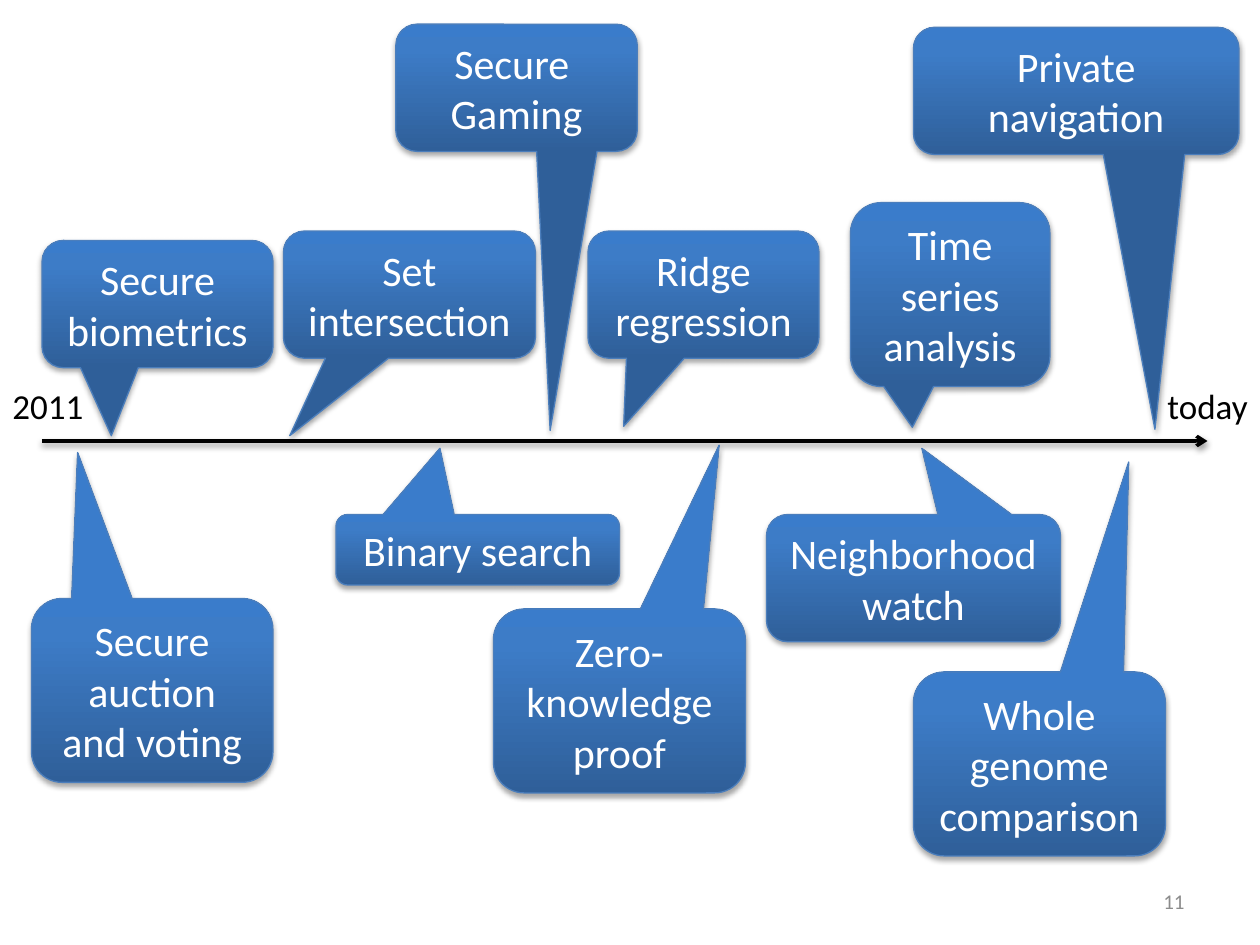
import copy

import pptx
import pptx.dml.color
import pptx.enum.shapes
import pptx.enum.text
import pptx.oxml
import pptx.oxml.ns
import pptx.util

Align = pptx.enum.text.PP_ALIGN
Anchor = pptx.enum.text.MSO_ANCHOR
qn = pptx.oxml.ns.qn

GRID = 12  # grid cells per inch
AXIS_ROW = 42
GRADIENT = [(0, "2F5F99"), (0.8, "3D7CC7"), (1, "3A7CCB")]

# text, left column, top row, columns wide, lines of text, pointer tip (column, row)
CALLOUTS = [
    ("Secure auction and voting", 3, 57, 23, 3, (7.4, 43.1)),
    ("Secure biometrics", 4, 22.9, 22, 2, (10.6, 41.5)),
    ("Ridge regression", 56, 22, 22, 2, (59.4, 40.6)),
    ("Neighborhood watch", 73, 49, 28, 2, (87.8, 42.7)),
    ("Binary search", 32, 49, 27, 1, (41.9, 42.7)),
    ("Time series analysis", 81, 19.3, 19, 3, (86.9, 40.7)),
    ("Set intersection", 27, 22, 24, 2, (27.6, 41.5)),
    ("Zero-knowledge proof", 47, 58, 24, 3, (68.5, 42.4)),
    ("Private navigation", 87, 2.6, 31, 2, (110, 40.9)),
    ("Secure \nGaming", 37.7, 2.3, 23, 2, (52.4, 41)),
    ("Whole genome comparison", 87, 64, 24, 3, (107.5, 44)),
]


def cells(count):
    return pptx.util.Inches(count / GRID)


def color(hex_value):
    return pptx.dml.color.RGBColor.from_string(hex_value)


def format_text(text_frame, text, size, hex_value, alignment):
    text_frame.text = text
    for paragraph in text_frame.paragraphs:
        paragraph.alignment = alignment
        for run in paragraph.runs:
            run.font.name = "Calibri"
            run.font.size = pptx.util.Pt(size)
            run.font.color.rgb = color(hex_value)


def set_shadow(properties, distance, opacity):
    """Put a soft shadow below the element; call after fill and line are set."""
    for old_effects in properties.findall(qn("a:effectLst")):
        properties.remove(old_effects)
    properties.append(pptx.oxml.parse_xml(
        f'<a:effectLst {pptx.oxml.ns.nsdecls("a")}>'
        f'<a:outerShdw blurRad="{pptx.util.Pt(3.1)}" dist="{pptx.util.Pt(distance)}" '
        'dir="5400000" rotWithShape="0"><a:srgbClr val="000000">'
        f'<a:alpha val="{opacity * 1000}"/></a:srgbClr></a:outerShdw></a:effectLst>'))


def set_gradient(shape):
    shape.fill.gradient()
    shape.fill.gradient_angle = 90
    stop_list = shape._element.spPr.find(".//" + qn("a:gsLst"))
    stop_list.append(copy.deepcopy(stop_list[-1]))
    for stop, (position, hex_value) in zip(shape.fill.gradient_stops, GRADIENT):
        stop.position = position
        stop.color.rgb = color(hex_value)


def add_label(slide, text, left, top, width, height, size=20, hex_value="000000",
              alignment=Align.LEFT, anchor=Anchor.TOP, wrap=False):
    box = slide.shapes.add_textbox(cells(left), cells(top), cells(width), cells(height))
    box.text_frame.word_wrap = wrap
    box.text_frame.vertical_anchor = anchor
    format_text(box.text_frame, text, size, hex_value, alignment)


def add_axis(slide, start, end):
    axis = slide.shapes.add_connector(
        pptx.enum.shapes.MSO_CONNECTOR.STRAIGHT,
        cells(start), cells(AXIS_ROW), cells(end), cells(AXIS_ROW))
    axis.line.color.rgb = color("000000")
    axis.line.width = pptx.util.Pt(2)
    line = axis.line._get_or_add_ln()
    line.append(pptx.oxml.parse_xml(
        f'<a:tailEnd {pptx.oxml.ns.nsdecls("a")} type="arrow"/>'))
    set_shadow(axis._element.spPr, 1.6, 38)


def add_callout(slide, text, left, top, width, line_count, tip):
    height = GRID * (0.11 + 0.45 * line_count)
    shape = slide.shapes.add_shape(
        pptx.enum.shapes.MSO_SHAPE.ROUNDED_RECTANGULAR_CALLOUT,
        cells(left), cells(top), cells(width), cells(height))
    # The pointer is measured from the centre, as a share of the body's size
    shape.adjustments[0] = (tip[0] - left) / width - 0.5
    shape.adjustments[1] = (tip[1] - top) / height - 0.5
    set_gradient(shape)
    shape.line.color.rgb = color("4B7EBC")
    shape.line.width = pptx.util.Pt(0.75)
    set_shadow(shape._element.spPr, 1.8, 35)
    shape.text_frame.word_wrap = True
    shape.text_frame.vertical_anchor = Anchor.MIDDLE
    format_text(shape.text_frame, text, 24, "FFFFFF", Align.CENTER)


def main():
    presentation = pptx.Presentation()
    presentation.slide_width = pptx.util.Inches(10)
    presentation.slide_height = pptx.util.Inches(7.5)
    slide = presentation.slides.add_slide(presentation.slide_layouts[6])

    # Slide number
    add_label(slide, "11", 86, 83.4, 28, 4.8, 12, "8C8C8C",
              Align.RIGHT, Anchor.MIDDLE, wrap=True)

    # Time axis with its two ends
    add_axis(slide, 4, 115)
    add_label(slide, "2011", 0, 36, 9.2, 5.3)
    add_label(slide, "today", 110, 36, 10.2, 5.3)

    # Events above and below the axis
    for callout in CALLOUTS:
        add_callout(slide, *callout)

    presentation.save("out.pptx")


if __name__ == "__main__":
    main()
